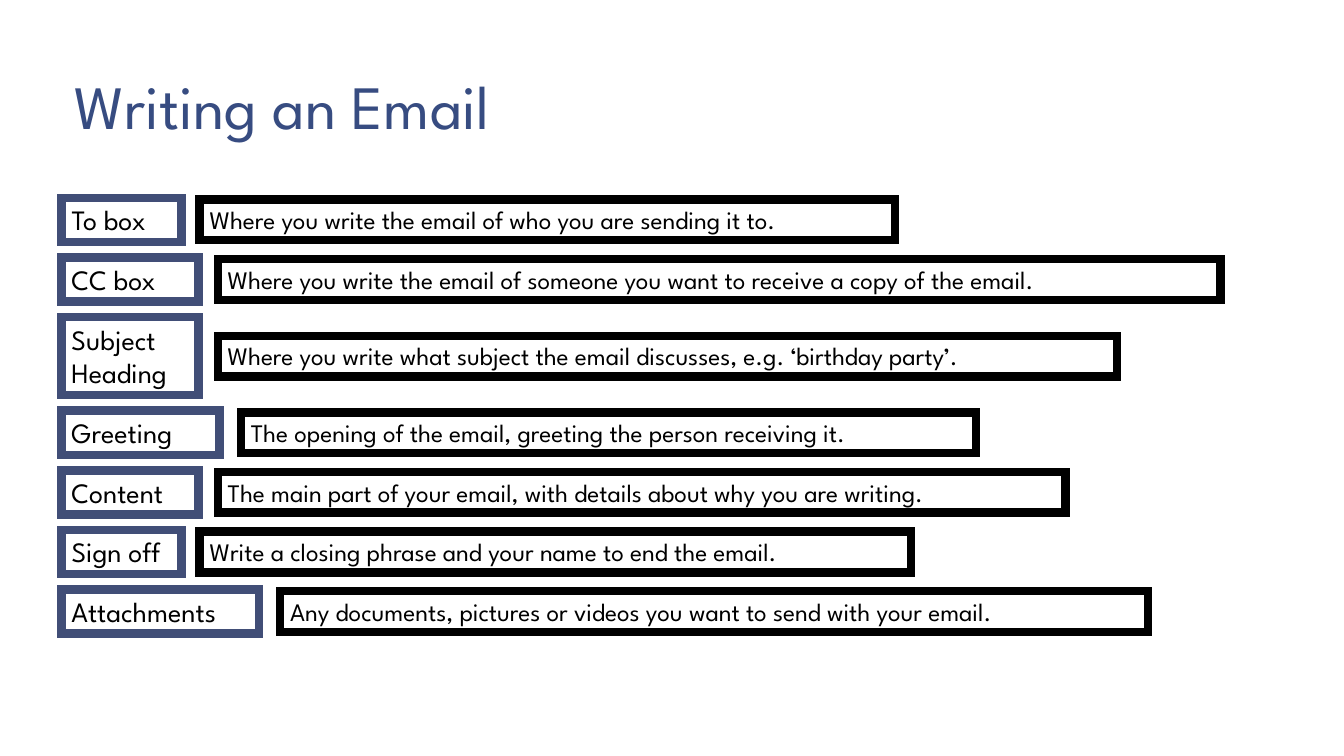
from lxml.etree import SubElement
from pptx import Presentation
from pptx.dml.color import RGBColor
from pptx.enum.text import MSO_ANCHOR as Anchor, MSO_AUTO_SIZE as AutoSize
from pptx.oxml.ns import qn
from pptx.util import Pt

FONT = "League Spartan"
COLORS = {"title": "374C81", "label": "414E77", "black": "000000", "white": "FFFFFF"}
MARGIN = 44
FIRST_TOP = 141.3
ROW_GAP = 11.1
LABEL_LINE_HEIGHTS = {1: 31.5, 2: 55.74}
MEANING_HEIGHT = 29.08

EMAIL_PARTS = [
    ("To box", 85.7, 1, 142.6, 496.8,
     "Where you write the email of who you are sending it to."),
    ("CC box", 97.9, 1, 155.5, 716.4,
     "Where you write the email of someone you want to receive a copy of the email."),
    ("Subject Heading", 97.9, 2, 155.5, 642.2,
     "Where you write what subject the email discusses, e.g. ‘birthday party’."),
    ("Greeting", 113, 1, 172.1, 524.9,
     "The opening of the email, greeting the person receiving it."),
    ("Content", 97.9, 1, 155.5, 605.5,
     "The main part of your email, with details about why you are writing."),
    ("Sign off", 85.7, 1, 142.6, 508.3,
     "Write a closing phrase and your name to end the email."),
    ("Attachments", 141.1, 1, 200.2, 619.9,
     "Any documents, pictures or videos you want to send with your email."),
]


def rgb(name):
    """Return the named colour."""
    return RGBColor.from_string(COLORS[name])


def add_text(slide, wording, left, top, width, height, size, color):
    """Add a wrapped text box with one styled paragraph."""
    box = slide.shapes.add_textbox(Pt(left), Pt(top), Pt(width), Pt(height))
    frame = box.text_frame
    frame.word_wrap = True
    frame.text = wording
    font = frame.paragraphs[0].runs[0].font
    font.name, font.size, font.color.rgb = FONT, Pt(size), rgb(color)
    return box


def add_title(slide, wording):
    """Add the slide title, resting on the bottom of its box."""
    frame = add_text(slide, wording, MARGIN, 19.4, 671.8, 87.1, 44, "title").text_frame
    frame.vertical_anchor = Anchor.BOTTOM
    frame.margin_left = frame.margin_right = Pt(9.36)
    frame.margin_top = frame.margin_bottom = Pt(5.04)
    frame.paragraphs[0].line_spacing = 0.85


def add_framed_text(slide, wording, left, top, width, height, size, border):
    """Add a white text box with a thick, square-cornered border."""
    box = add_text(slide, wording, left, top, width, height, size, "black")
    box.text_frame.auto_size = AutoSize.SHAPE_TO_FIT_TEXT
    box.fill.solid()
    box.fill.fore_color.rgb = rgb("white")
    box.line.color.rgb = rgb(border)
    box.line.width = Pt(6)
    outline = box.fill._xPr.find(qn("a:ln"))
    SubElement(outline, qn("a:miter"), lim="800000")


def main():
    """Build and save the slide."""
    deck = Presentation()
    deck.slide_width, deck.slide_height = Pt(960), Pt(540)
    slide = deck.slides.add_slide(deck.slide_layouts[6])
    add_title(slide, "Writing an Email")
    top = FIRST_TOP
    for label, label_width, lines, meaning_left, meaning_width, meaning in EMAIL_PARTS:
        height = LABEL_LINE_HEIGHTS[lines]
        meaning_top = top + (height - MEANING_HEIGHT) / 2
        add_framed_text(slide, label, MARGIN, top, label_width, height, 20, "label")
        add_framed_text(slide, meaning, meaning_left, meaning_top,
                        meaning_width, MEANING_HEIGHT, 18, "black")
        top += height + ROW_GAP
    deck.save("out.pptx")


if __name__ == "__main__":
    main()
